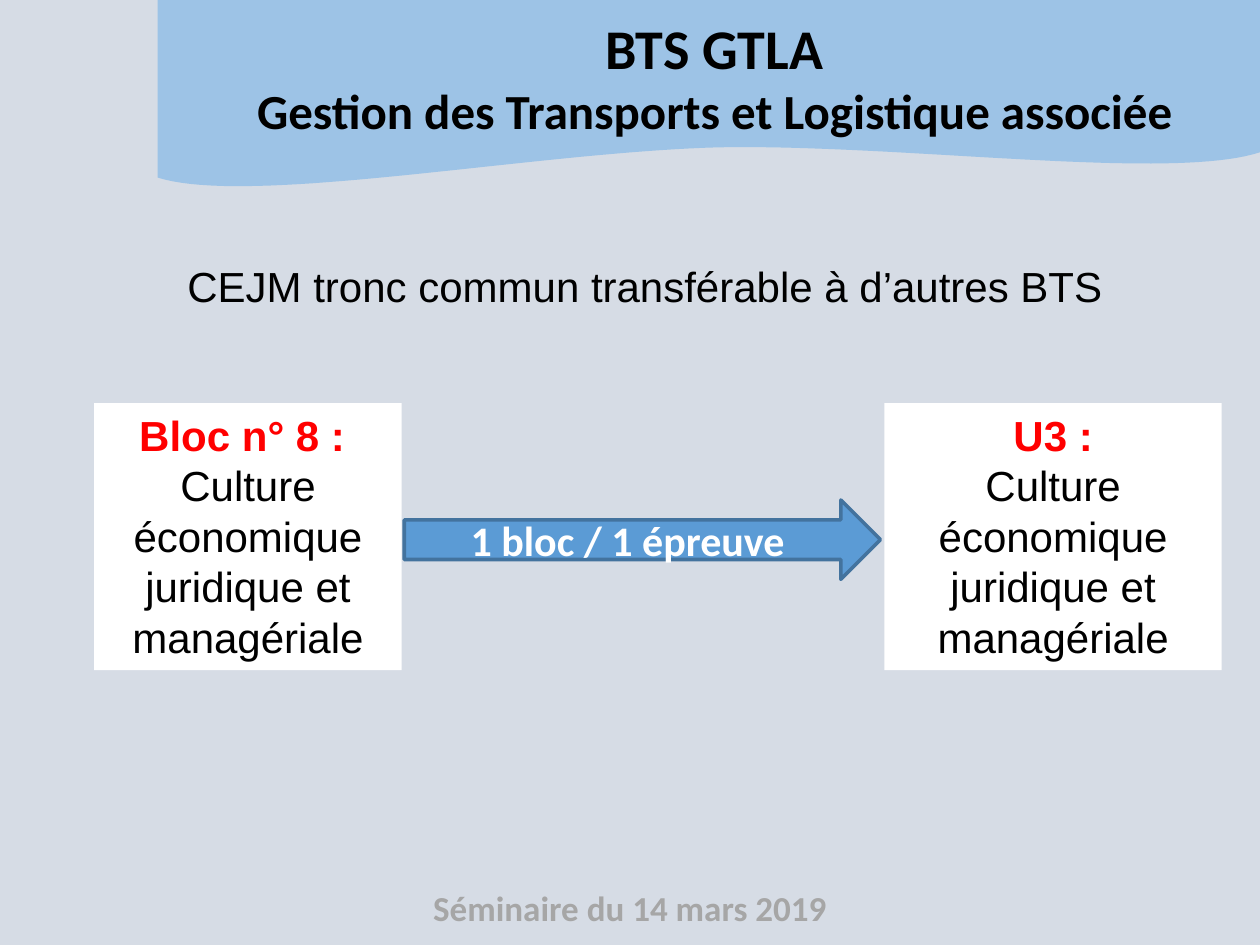
from dataclasses import dataclass

from pptx import Presentation
from pptx import util as u
from pptx.dml.color import RGBColor
from pptx.enum import shapes, text


@dataclass(frozen=True)
class Theme:
    background: str = "D6DCE5"
    banner: str = "9DC3E6"
    arrow: str = "5B9BD5"
    arrow_line: str = "43739E"
    white: str = "FFFFFF"
    black: str = "000000"
    accent: str = "FF0000"
    footer: str = "A6A6A6"
    heading_font: str = "Calibri"
    body_font: str = "Arial"
    title_size: int = 32
    subtitle_size: int = 28
    body_size: int = 24
    footer_size: int = 20


@dataclass(frozen=True)
class Box:
    """Left, top, width and height in centimetres."""
    left: float
    top: float
    width: float
    height: float

    def lengths(self) -> tuple:
        return u.Cm(self.left), u.Cm(self.top), u.Cm(self.width), u.Cm(self.height)


@dataclass(frozen=True)
class Line:
    wording: str
    size: int
    font: str
    color: str
    bold: bool = False


@dataclass(frozen=True)
class Card:
    heading: str
    box: Box


THEME = Theme()
COURSE = "Culture économique juridique et managériale"
CARDS = (
    Card("Bloc n° 8 : ", Box(1.9, 8.13, 6.2, 5.38)),
    Card("U3 :", Box(17.83, 8.13, 6.8, 5.38)),
)
BANNER_LEFT, BANNER_RIGHT = 3.18, 25.4
# Each curve: start, two control points, end
BANNER_CURVES = (
    ((25.4, 3.07), (23.6, 3.66), (18.19, 2.9), (14.48, 2.97)),
    ((14.48, 2.97), (10.77, 3.07), (5.05, 4.17), (3.18, 3.58)),
)


def rgb(color: str) -> RGBColor:
    return RGBColor.from_string(color)


def write(shape, lines: list[Line], anchor=text.MSO_ANCHOR.TOP) -> None:
    frame = shape.text_frame
    frame.word_wrap = True
    frame.auto_size = text.MSO_AUTO_SIZE.NONE
    frame.vertical_anchor = anchor
    frame.text = "\n".join(line.wording for line in lines)
    for paragraph, line in zip(frame.paragraphs, lines):
        paragraph.alignment = text.PP_ALIGN.CENTER
        for run in paragraph.runs:
            run.font.name = line.font
            run.font.size = u.Pt(line.size)
            run.font.bold = line.bold
            run.font.color.rgb = rgb(line.color)


def paint(shape, fill: str, outline: str | None = None) -> None:
    shape.shadow.inherit = False
    shape.fill.solid()
    shape.fill.fore_color.rgb = rgb(fill)
    if outline:
        shape.line.color.rgb = rgb(outline)
        shape.line.width = u.Pt(2)
    else:
        shape.line.fill.background()


def curve_points(curve: tuple, steps: int = 40) -> list[tuple[int, int]]:
    """Sample a cubic Bézier curve, leaving out its start."""
    points = []
    for step in range(1, steps + 1):
        t = step / steps
        weights = ((1 - t) ** 3, 3 * t * (1 - t) ** 2, 3 * t**2 * (1 - t), t**3)
        x, y = (sum(w * p[axis] for w, p in zip(weights, curve)) for axis in (0, 1))
        points.append((u.Cm(x), u.Cm(y)))
    return points


def draw_banner(slide) -> None:
    builder = slide.shapes.build_freeform(u.Cm(BANNER_LEFT), 0)
    outline = [(u.Cm(BANNER_RIGHT), 0), (u.Cm(BANNER_RIGHT), u.Cm(BANNER_CURVES[0][0][1]))]
    for curve in BANNER_CURVES:
        outline += curve_points(curve)
    builder.add_line_segments(outline, close=True)
    banner = builder.convert_to_shape()
    paint(banner, THEME.banner)
    slide.shapes.title.element.addprevious(banner.element)  # behind the title


def draw_title(slide) -> None:
    title = slide.shapes.title
    title.left, title.top, title.width, title.height = Box(4.78, 0.15, 19.25, 2.82).lengths()
    write(title, [
        Line("BTS GTLA", THEME.title_size, THEME.heading_font, THEME.black, True),
        Line("Gestion des Transports et Logistique associée",
             THEME.subtitle_size, THEME.heading_font, THEME.black, True),
    ])


def draw_text(slide, box: Box, line: Line) -> None:
    write(slide.shapes.add_textbox(*box.lengths()), [line])


def draw_card(slide, card: Card) -> None:
    shape = slide.shapes.add_shape(shapes.MSO_SHAPE.RECTANGLE, *card.box.lengths())
    paint(shape, THEME.white)
    write(shape, [
        Line(card.heading, THEME.body_size, THEME.body_font, THEME.accent, True),
        Line(COURSE, THEME.body_size, THEME.body_font, THEME.black),
    ])


def draw_arrow(slide) -> None:
    arrow = slide.shapes.add_shape(
        shapes.MSO_SHAPE.RIGHT_ARROW, *Box(8.15, 10.08, 9.6, 1.6).lengths())
    paint(arrow, THEME.arrow, THEME.arrow_line)
    write(arrow, [Line("1 bloc / 1 épreuve ", THEME.body_size, THEME.heading_font,
                       THEME.white, True)], text.MSO_ANCHOR.MIDDLE)


def main() -> None:
    presentation = Presentation()
    presentation.slide_width, presentation.slide_height = u.Cm(25.4), u.Cm(19.05)
    slide = presentation.slides.add_slide(presentation.slide_layouts.get_by_name("Title Only"))
    slide.background.fill.solid()
    slide.background.fill.fore_color.rgb = rgb(THEME.background)

    draw_banner(slide)
    draw_title(slide)
    draw_text(slide, Box(6.35, 17.75, 12.7, 1.11),
              Line("Séminaire du 14 mars 2019", THEME.footer_size, THEME.heading_font,
                   THEME.footer, True))
    for card in CARDS:
        draw_card(slide, card)
    draw_arrow(slide)
    draw_text(slide, Box(1.9, 5.13, 22.2, 1.28),
              Line("CEJM tronc commun transférable à d’autres BTS", THEME.body_size,
                   THEME.body_font, THEME.black))
    presentation.save("out.pptx")


if __name__ == "__main__":
    main()
